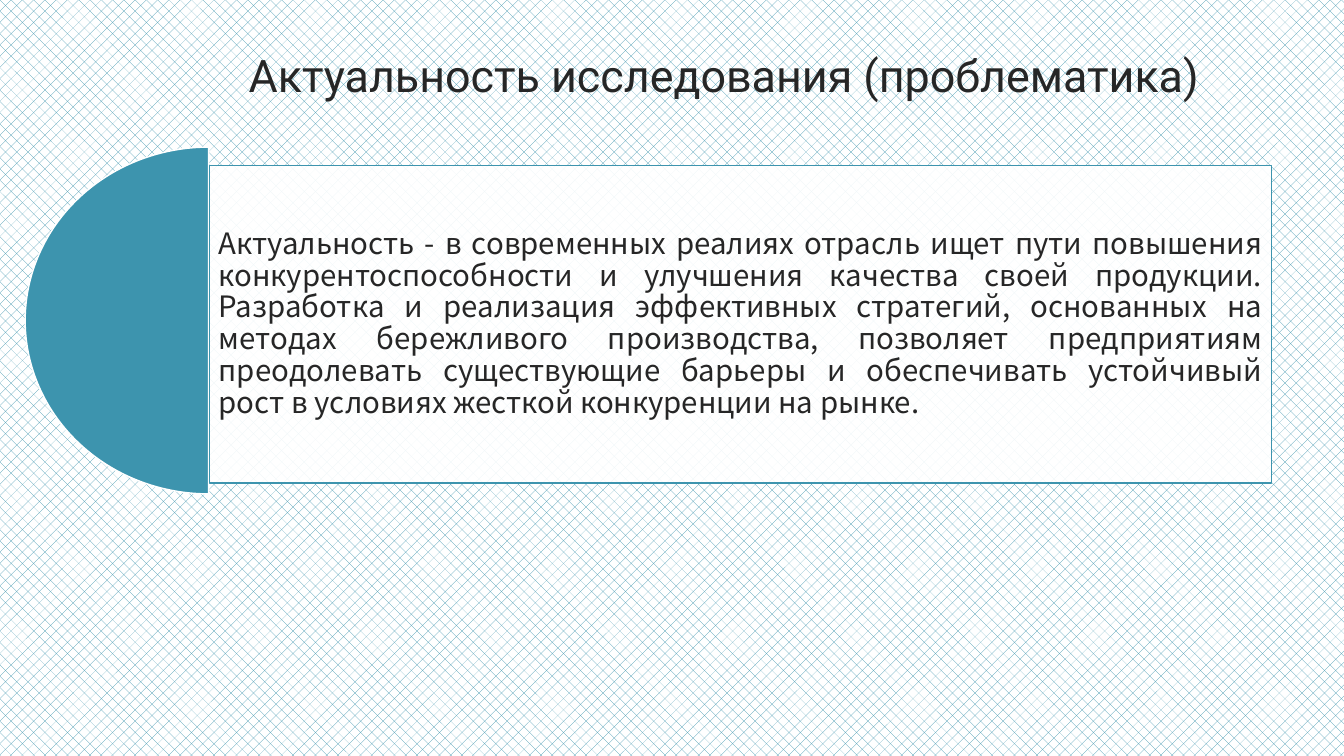
from dataclasses import dataclass

from lxml import etree
from pptx import Presentation
from pptx.dml.color import RGBColor
from pptx.enum.dml import MSO_PATTERN
from pptx.enum.shapes import MSO_SHAPE
from pptx.enum.text import MSO_ANCHOR, PP_ALIGN
from pptx.oxml.ns import qn
from pptx.shapes.autoshape import Shape
from pptx.slide import Slide
from pptx.text.text import TextFrame
from pptx.util import Inches, Pt

PIE, RECTANGLE = MSO_SHAPE.PIE, MSO_SHAPE.RECTANGLE
CENTER, JUSTIFY = PP_ALIGN.CENTER, PP_ALIGN.JUSTIFY
TOP, MIDDLE = MSO_ANCHOR.TOP, MSO_ANCHOR.MIDDLE
PERCENT_25 = MSO_PATTERN.PERCENT_25


@dataclass(frozen=True)
class Theme:
    accent: RGBColor = RGBColor(0x3D, 0x94, 0xAE)
    paper: RGBColor = RGBColor(0xFF, 0xFF, 0xFF)
    ink: RGBColor = RGBColor(0x26, 0x26, 0x26)
    title_font: str = "Roboto"
    body_font: str = "Noto Sans CJK SC"
    title_size: int = 32
    body_size: int = 21
    line_width: int = 1


@dataclass(frozen=True)
class Box:
    left: float
    top: float
    width: float
    height: float

    def lengths(self) -> tuple[Inches, Inches, Inches, Inches]:
        return (Inches(self.left), Inches(self.top),
                Inches(self.width), Inches(self.height))


@dataclass(frozen=True)
class Passage:
    text: str
    font: str
    size: int
    align: PP_ALIGN
    anchor: MSO_ANCHOR
    line_spacing: float = 1.0


THEME = Theme()
TITLE_BOX = Box(1.96, 0.42, 10.56, 0.64)
HALF_DISC_BOX = Box(0.25, 1.46, 3.64, 3.44)
PANEL_BOX = Box(2.08, 1.64, 10.53, 3.15)
PANEL_INSET = 0.09
PANEL_OPACITY = 90
# Pie angles are in 60000ths of a degree, adjustments in 100000ths.
PIE_UNITS_PER_DEGREE = 0.6

TITLE = Passage(
    "Актуальность исследования (проблематика) ",
    THEME.title_font, THEME.title_size, CENTER, TOP,
)
RELEVANCE = Passage(
    "Актуальность - в современных реалиях отрасль ищет пути повышения "
    "конкурентоспособности и улучшения качества своей продукции. "
    "Разработка и реализация эффективных стратегий, основанных на методах "
    "бережливого производства, позволяет предприятиям преодолевать "
    "существующие барьеры и обеспечивать устойчивый рост в условиях "
    "жесткой конкуренции на рынке.",
    THEME.body_font, THEME.body_size, JUSTIFY, MIDDLE, 0.9,
)


def write_passage(frame: TextFrame, passage: Passage) -> None:
    frame.word_wrap = True
    frame.vertical_anchor = passage.anchor
    paragraph = frame.paragraphs[0]
    paragraph.text = passage.text
    paragraph.alignment = passage.align
    paragraph.line_spacing = passage.line_spacing
    paragraph.font.name = passage.font
    paragraph.font.size = Pt(passage.size)
    paragraph.font.color.rgb = THEME.ink


def add_outlined_shape(slide: Slide, kind: MSO_SHAPE, box: Box,
                       fill: RGBColor, line: RGBColor) -> Shape:
    shape = slide.shapes.add_shape(kind, *box.lengths())
    shape.shadow.inherit = False
    shape.fill.solid()
    shape.fill.fore_color.rgb = fill
    shape.line.color.rgb = line
    shape.line.width = Pt(THEME.line_width)
    return shape


def set_fill_opacity(shape: Shape, percent: int) -> None:
    color = shape.fill._xPr.find(qn("a:solidFill"))[0]
    etree.SubElement(color, qn("a:alpha")).set("val", str(percent * 1000))


def paint_background(slide: Slide) -> None:
    fill = slide.background.fill
    fill.patterned()
    fill.pattern = PERCENT_25
    fill.fore_color.rgb = THEME.accent
    fill.back_color.rgb = THEME.paper


def add_title(slide: Slide) -> None:
    title = slide.shapes.add_textbox(*TITLE_BOX.lengths())
    write_passage(title.text_frame, TITLE)


def add_half_disc(slide: Slide) -> None:
    half_disc = add_outlined_shape(slide, PIE, HALF_DISC_BOX, THEME.accent, THEME.paper)
    for index, degrees in enumerate((90, 270)):
        half_disc.adjustments[index] = degrees * PIE_UNITS_PER_DEGREE


def add_relevance_panel(slide: Slide) -> None:
    panel = add_outlined_shape(slide, RECTANGLE, PANEL_BOX, THEME.paper, THEME.accent)
    set_fill_opacity(panel, PANEL_OPACITY)
    frame = panel.text_frame
    frame.margin_left = frame.margin_right = Inches(PANEL_INSET)
    frame.margin_top = frame.margin_bottom = Inches(PANEL_INSET)
    write_passage(frame, RELEVANCE)


def main() -> None:
    presentation = Presentation()
    presentation.slide_width = Inches(13.33)
    presentation.slide_height = Inches(7.5)
    slide = presentation.slides.add_slide(presentation.slide_layouts[6])
    paint_background(slide)
    add_title(slide)
    add_half_disc(slide)
    add_relevance_panel(slide)
    presentation.save("out.pptx")


if __name__ == "__main__":
    main()
